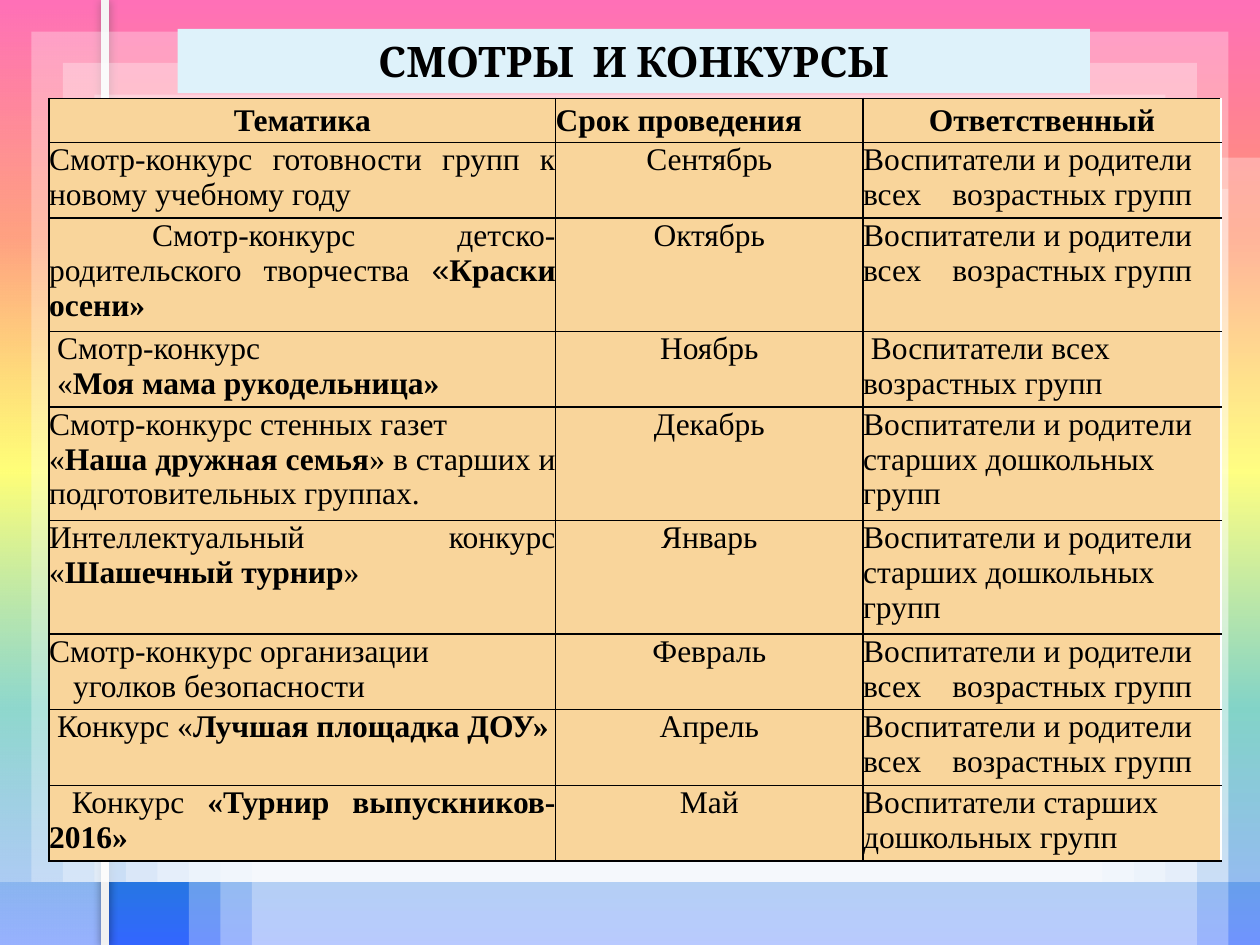
from dataclasses import dataclass
from lxml.etree import SubElement
from pptx import Presentation
from pptx.dml.color import RGBColor
from pptx.enum.shapes import MSO_CONNECTOR, MSO_SHAPE
from pptx.enum.text import MSO_ANCHOR, MSO_AUTO_SIZE, PP_ALIGN
from pptx.oxml.ns import qn
from pptx.util import Inches, Pt


@dataclass(frozen=True)
class Theme:
    white: str = "FFFFFF"
    black: str = "000000"
    rail: str = "F1F1F1"
    banner: str = "DEF2FA"
    cell: str = "F9D59B"
    sky: tuple = ((0, "FF3399"), (25, "FF6633"), (50, "FFFF00"),
                  (75, "01A78F"), (100, "3366FF"))
    veil: int = 30
    head: int = 24
    body: int = 18
    serif: str = "Times New Roman"
    sans: str = "Arial"
    title: str = "Cambria"


T = Theme()
LEFT, MID, JUST = PP_ALIGN.LEFT, PP_ALIGN.CENTER, PP_ALIGN.JUSTIFY


# Text pieces: a run is (text, bold, font), a paragraph is (align, runs)
def thin(text, font=T.serif):
    return text, False, font


def bold(text):
    return text, True, T.serif


def para(align, *runs):
    return align, runs


def both(group):
    return f"Воспитатели и родители {group}"


ALL = both("всех\tвозрастных групп")
OLD = both("старших дошкольных групп")
HEADS = (("Тематика", MID), ("Срок проведения", LEFT), ("Ответственный", MID))
# Each row: height, theme paragraphs, month, people in charge
ROWS = (
    (0.6, [para(JUST, thin("Смотр-конкурс готовности групп к новому учебному году"))],
     "Сентябрь", ALL),
    (0.9, [para(JUST, thin(" ", T.sans),
                thin("Смотр-конкурс детско-родительского творчества "),
                thin("«", T.sans), bold("Краски осени»"))],
     "Октябрь", ALL),
    (0.6, [para(LEFT, thin(" Смотр-конкурс")),
           para(LEFT, thin(" «"), bold("Моя мама рукодельница»"))],
     "Ноябрь", " Воспитатели всех возрастных групп"),
    (0.9, [para(JUST, thin("Смотр-конкурс стенных газет")),
           para(JUST, thin("«"), bold("Наша дружная семья"),
                thin("» в старших и подготовительных группах."))],
     "Декабрь", OLD),
    (0.9, [para(JUST, thin("Интеллектуальный конкурс «"),
                bold("Шашечный турнир"), thin("»"))],
     "Январь", OLD),
    (0.6, [para(LEFT, thin("Смотр-конкурс организации")),
           para(JUST, thin("уголков безопасности"))],
     "Февраль", ALL),
    (0.6, [para(LEFT, thin(" Конкурс «"), bold("Лучшая площадка ДОУ»"))],
     "Апрель", ALL),
    (0.6, [para(JUST, thin(" Конкурс "), bold("«Турнир выпускников- 2016»"))],
     "Май", "Воспитатели старших дошкольных групп"),
)


def add(node, tag, **attrs):
    return SubElement(node, qn(tag), {k: str(v) for k, v in attrs.items()})


def color(node, tone, alpha=100):
    clr = add(node, "a:srgbClr", val=tone)
    if alpha < 100:
        add(clr, "a:alpha", val=alpha * 1000)


def paint(fill, tone):
    fill.solid()
    fill.fore_color.rgb = RGBColor.from_string(tone)


def blend(node, stops, angle):
    """Turn the solid fill of a node into a linear gradient."""
    old = node.find(qn("a:solidFill"))
    grad = add(node, "a:gradFill", rotWithShape=1)
    node.replace(old, grad)
    band = add(grad, "a:gsLst")
    for pos, tone, *alpha in stops:
        color(add(band, "a:gs", pos=pos * 1000), tone, *alpha)
    add(grad, "a:lin", ang=angle * 60000, scaled=0)


def rect(shapes, box, tone):
    shape = shapes.add_shape(MSO_SHAPE.RECTANGLE, *map(Inches, box))
    shape.shadow.inherit = False
    shape.line.fill.background()
    paint(shape.fill, tone)
    return shape


def write(par, text, strong, font, size):
    run = par.add_run()
    run.text = text
    run.font.name, run.font.size, run.font.bold = font, Pt(size), strong
    run.font.color.rgb = RGBColor.from_string(T.black)


def veils(slide, box, count, step=0.25):
    """Nested translucent sheets that share one bottom edge."""
    x, y, w, h = box
    group = slide.shapes.add_group_shape()
    for i in range(count):
        d = i * step
        sheet = rect(group.shapes, (x + d, y + d, w - 2 * d, h - d), T.white)
        tone = sheet.element.spPr.find(qn("a:solidFill"))[0]
        add(tone, "a:alpha", val=T.veil * 1000)


def strip(slide, box):
    """Fading side strip with a rail near its right edge."""
    x, y, w, h = box
    side = rect(slide.shapes, box, T.white)
    blend(side.element.spPr, ((0, T.white, 50), (100, T.white, 0)), 270)
    at = Inches(x + w - 0.02)
    rail = slide.shapes.add_connector(
        MSO_CONNECTOR.STRAIGHT, at, Inches(y), at, Inches(y + h))
    rail.line.width = Pt(4.5)
    paint(rail.line.fill, T.rail)
    glow = add(rail.element.spPr, "a:effectLst")
    color(add(glow, "a:outerShdw", blurRad=Pt(5), dist=0, dir=0), T.black, 40)


def banner(slide, box):
    frame = rect(slide.shapes, box, T.banner).text_frame
    frame.word_wrap = True
    frame.auto_size = MSO_AUTO_SIZE.SHAPE_TO_FIT_TEXT
    frame.vertical_anchor = MSO_ANCHOR.TOP
    par = frame.paragraphs[0]
    par.alignment = MID
    write(par, "СМОТРЫ  И КОНКУРСЫ", True, T.title, T.head)


def fill_cell(cell, paras, edges, gap=None):
    cell.margin_left = cell.margin_right = cell.margin_top = cell.margin_bottom = 0
    props = cell._tc.get_or_add_tcPr()
    for edge in edges:
        line = add(props, f"a:ln{edge}", w=Pt(1))
        color(add(line, "a:solidFill"), T.black)
    paint(cell.fill, T.cell)
    frame = cell.text_frame
    for i, (align, runs) in enumerate(paras):
        par = frame.add_paragraph() if i else frame.paragraphs[0]
        par.alignment = align
        if gap:
            par.line_spacing = gap
        for text, strong, font in runs:
            write(par, text, strong, font, T.body)
            if "\t" in text:
                tabs = add(par._p.get_or_add_pPr(), "a:tabLst")
                add(tabs, "a:tab", pos=Inches(0.71), algn="l")


def plan(slide, box):
    """Table of contests: theme, month, people in charge."""
    table = slide.shapes.add_table(
        len(ROWS) + 1, len(HEADS), *map(Inches, box)).table
    table.first_row = table.horz_banding = False
    for col, w in zip(table.columns, (4.02, 2.44, 2.84)):
        col.width = Inches(w)
    heads = [[para(align, bold(text))] for text, align in HEADS]
    lines = [(0.35, heads, 1.15)]
    for high, topic, month, staff in ROWS:
        cells = [topic, [para(MID, thin(month))], [para(LEFT, thin(staff))]]
        lines.append((high, cells, None))
    for r, (high, cells, gap) in enumerate(lines):
        table.rows[r].height = Inches(high)
        for c, paras in enumerate(cells):
            edges = "LTB" if c == len(HEADS) - 1 else "LRTB"
            fill_cell(table.cell(r, c), paras, edges, gap)
    # Indent the second line of the February theme
    corner = table.cell(6, 0).text_frame.paragraphs[1]
    corner._p.get_or_add_pPr().set("marL", str(Inches(0.19)))


def main():
    deck = Presentation()
    deck.slide_width, deck.slide_height = Inches(10), Inches(7.5)
    slide = deck.slides.add_slide(deck.slide_layouts[6])
    # Backdrop
    slide.background.fill.solid()
    blend(slide.element.find(".//" + qn("p:bgPr")), T.sky, 90)
    veils(slide, (1.5, 1.25, 8.5, 6.25), 3)
    strip(slide, (0, 0, 0.85, 7.5))
    veils(slide, (0, 0, 10, 7), 6)
    # Content
    banner(slide, (1.41, 0.23, 7.24, 0.51))
    plan(slide, (0.39, 0.78, 9.3, 6.05))
    deck.save("out.pptx")


if __name__ == "__main__":
    main()
